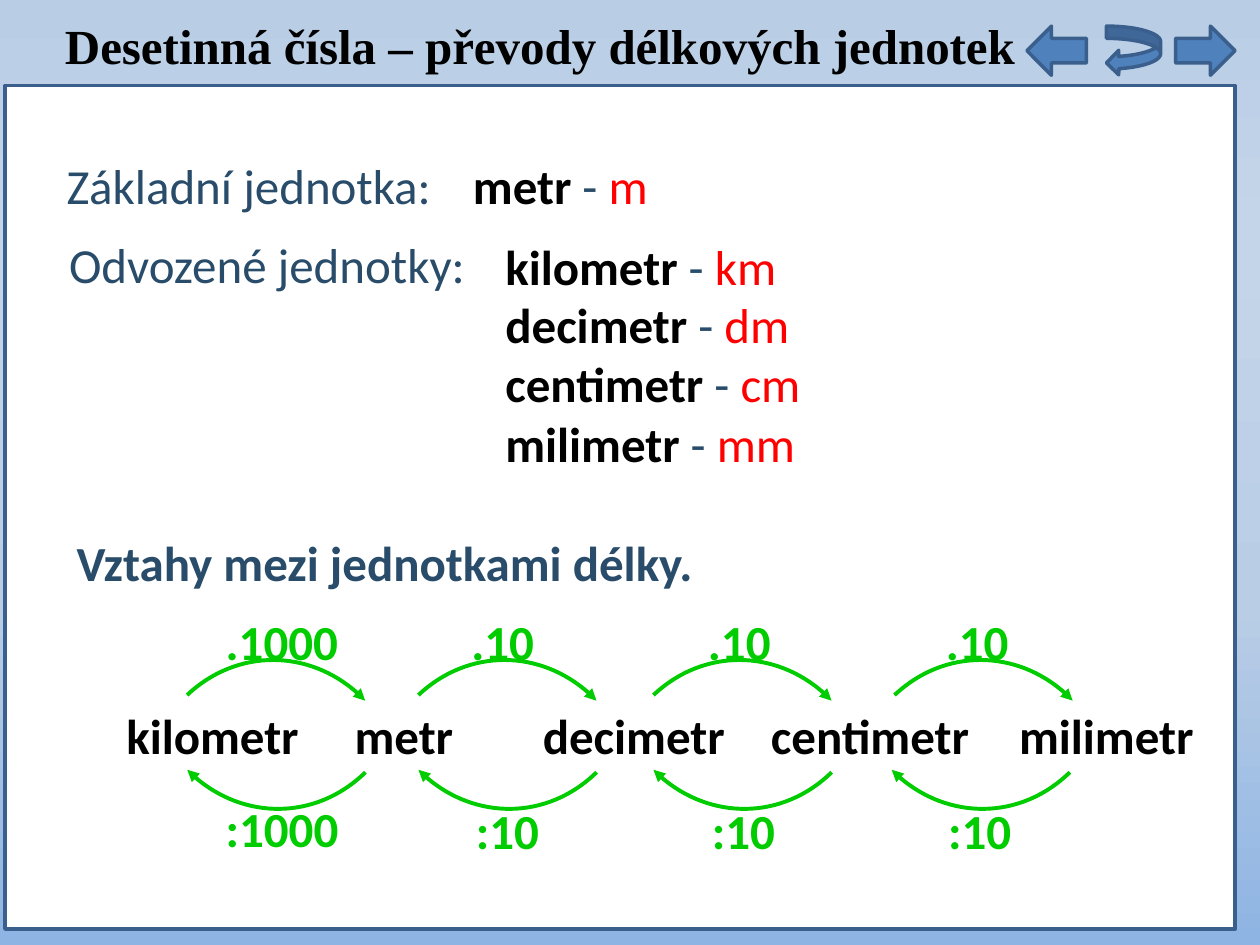
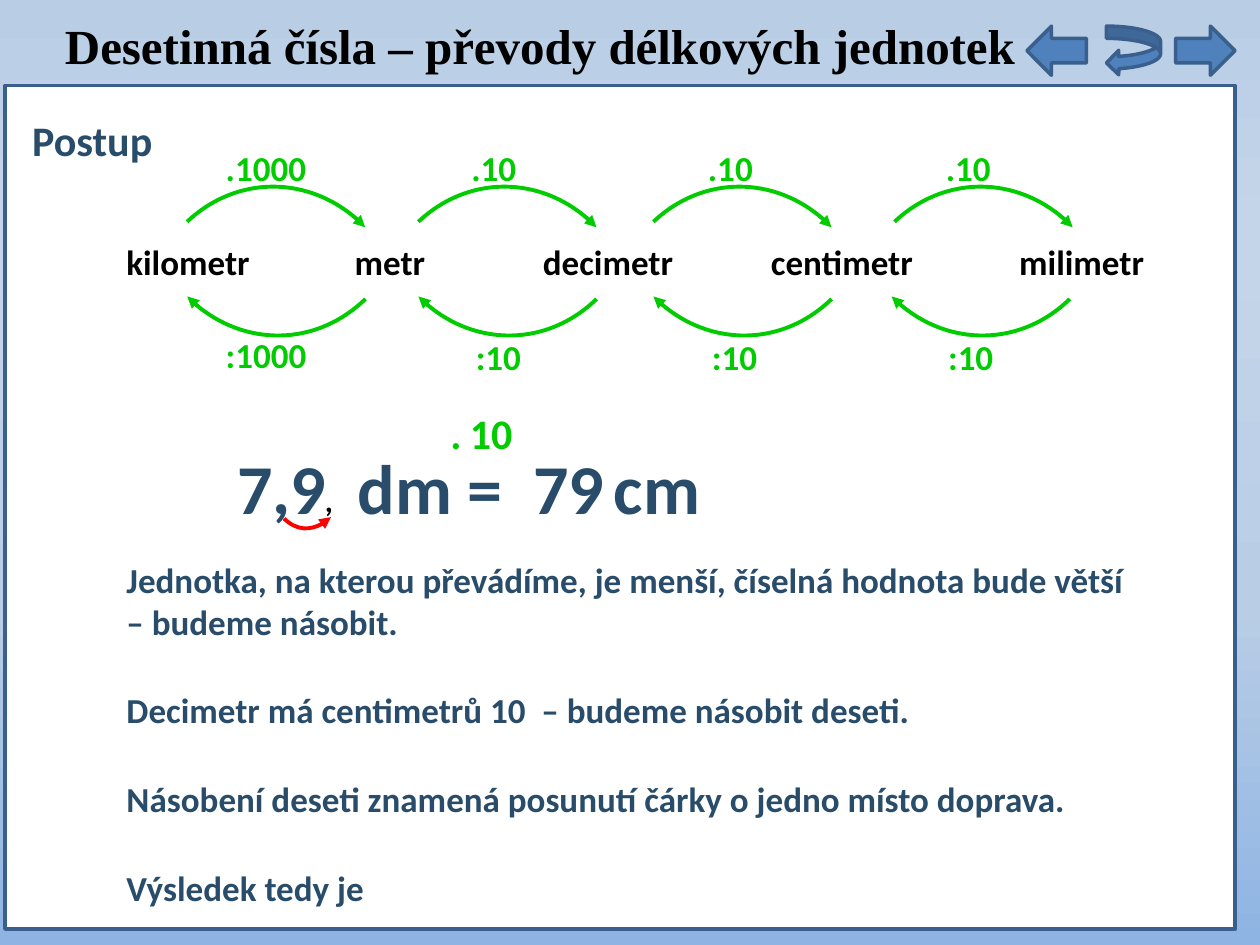
"""Build two slides on converting decimal length units."""
from dataclasses import dataclass

import lxml.etree
import pptx
import pptx.dml.color
import pptx.enum.shapes
import pptx.enum.text
import pptx.oxml.ns
import pptx.util

Pt = pptx.util.Pt
RGB = pptx.dml.color.RGBColor.from_string
qn = pptx.oxml.ns.qn
MSO_SHAPE = pptx.enum.shapes.MSO_SHAPE
PP_ALIGN = pptx.enum.text.PP_ALIGN
MSO_ANCHOR = pptx.enum.text.MSO_ANCHOR


@dataclass(frozen=True)
class Theme:
    black: str = "000000"
    white: str = "FFFFFF"
    slate: str = "284C6A"
    red: str = "FF0000"
    green: str = "00CC00"
    blue: str = "4F81BD"
    outline: str = "3A5F8C"
    sky: tuple = ((0, "B9CDE5"), (25, "C5D5E9"), (64, "B9CDE5"), (100, "8EB4E3"))
    font: str = "Calibri"
    title_font: str = "Times New Roman"
    large: int = 28
    equation: int = 40
    heading: int = 24
    small: int = 20
    comma: int = 18
    border: float = 2
    arc: float = 2.25


T = Theme()
ROW_H = 33.84


def add_text(s, x, y, w, h, runs, size, font=T.font, align=PP_ALIGN.LEFT,
             anchor=MSO_ANCHOR.MIDDLE, tabs=()):
    """Add a one-paragraph text box from (text, colour, bold) runs."""
    tf = s.shapes.add_textbox(Pt(x), Pt(y), Pt(w), Pt(h)).text_frame
    tf.word_wrap = True
    tf.vertical_anchor = anchor
    p = tf.paragraphs[0]
    p.alignment = align
    if tabs:
        tab_list = lxml.etree.SubElement(p._p.get_or_add_pPr(), qn("a:tabLst"))
        for tab in tabs:
            lxml.etree.SubElement(tab_list, qn("a:tab"), pos=str(Pt(tab)), algn="l")
    for text, colour, bold in runs:
        r = p.add_run()
        r.text = text
        r.font.name = font
        r.font.size = Pt(size)
        r.font.bold = bold
        r.font.color.rgb = RGB(colour)


def add_arc(s, x, y, radius, rotation, colour, arrow_end):
    """Add a rotated quarter circle with an arrowhead at one end."""
    builder = s.shapes.build_freeform(Pt(x), Pt(y))
    builder.add_line_segments([(Pt(x + radius), Pt(y + radius))], close=False)
    sp = builder.convert_to_shape()
    straight = next(sp._element.iter(qn("a:lnTo")))
    curve = lxml.etree.Element(qn("a:cubicBezTo"))
    for px, py in [(0.5523, 0), (1, 0.4477), (1, 1)]:
        lxml.etree.SubElement(curve, qn("a:pt"), x=str(Pt(radius * px)), y=str(Pt(radius * py)))
    straight.getparent().replace(straight, curve)
    sp.rotation = rotation
    sp.shadow.inherit = False
    sp.fill.background()
    sp.line.color.rgb = RGB(colour)
    sp.line.width = Pt(T.arc)
    ln = sp._element.spPr.find(qn("a:ln"))
    lxml.etree.SubElement(ln, qn(arrow_end), type="triangle")


prs = pptx.Presentation()
prs.slide_width, prs.slide_height = Pt(720), Pt(540)

fill = prs.slide_master.background.fill
fill.gradient()
fill.gradient_angle = 270
stops = fill.gradient_stops[0]._gs.getparent()
for gs in list(stops):
    stops.remove(gs)
for percent, colour in T.sky:
    gs = lxml.etree.SubElement(stops, qn("a:gs"), pos=str(percent * 1000))
    lxml.etree.SubElement(gs, qn("a:srgbClr"), val=colour)

frame = [
    (MSO_SHAPE.RECTANGLE, 2.88, 48.96, 703, 482, T.white),
    (MSO_SHAPE.RIGHT_ARROW, 671.76, 14.9, 34, 28.08, T.blue),
    (MSO_SHAPE.LEFT_ARROW, 586.8, 14.9, 34, 28.08, T.blue),
    (MSO_SHAPE.CURVED_LEFT_ARROW, 632.3, 14.9, 30.96, 28.08, T.blue),
]
chain_units = [("kilometr", 65.1), ("metr", 195.6), ("decimetr", 303.12),
               ("centimetr", 433.44), ("milimetr", 575.28)]
chain_steps = [
    ("1000", 79.4, 121.8, 121.9, 121.9, 121.9, 53.6),
    ("10", 56.88, 254, 262.2, 254, 264.8, 54.7),
    ("10", 56.88, 388.3, 397.44, 388.3, 399.7, 54.7),
    ("10", 56.88, 526.1, 533.4, 524.4, 534.7, 54.7),
]

slides = []
for chain_y, chain_size in [(402.8, T.large), (132.3, T.small)]:
    s = prs.slides.add_slide(prs.slide_layouts[6])
    slides.append(s)
    for kind, x, y, w, h, colour in frame:
        sp = s.shapes.add_shape(kind, Pt(x), Pt(y), Pt(w), Pt(h))
        sp.shadow.inherit = False
        sp.fill.solid()
        sp.fill.fore_color.rgb = RGB(colour)
        sp.line.color.rgb = RGB(T.outline)
        sp.line.width = Pt(T.border)
    add_text(s, 1.8, -2.16, 613.44, 55.44,
             [("Desetinná čísla – převody délkových jednotek", T.black, True)],
             T.large, T.title_font, PP_ALIGN.CENTER)
    for unit, x in chain_units:
        w = 118.8 if unit == "milimetr" else 147.6
        add_text(s, x, chain_y, w, ROW_H, [(unit, T.black, True)], chain_size)
    for factor, w, up_x, times_x, down_x, divide_x, divide_dy in chain_steps:
        add_arc(s, up_x, chain_y - 40, 72, 316.8, T.green, "a:tailEnd")
        add_text(s, times_x, chain_y - 53.4, w, ROW_H, [("." + factor, T.green, True)], chain_size)
        add_arc(s, down_x, chain_y + 1.8, 72, 135.8, T.green, "a:tailEnd")
        add_text(s, divide_x, chain_y + divide_dy, w, ROW_H, [(":" + factor, T.green, True)], chain_size)

units_slide, method_slide = slides

for name, symbol, x, y in [
    ("metr", "m", 263.2, 88.56),
    ("kilometr", "km", 281.7, 135),
    ("decimetr", "dm", 281.7, 168.1),
    ("centimetr", "cm", 281.7, 201.9),
    ("milimetr", "mm", 281.7, 236.16),
]:
    add_text(units_slide, x, y, 320, ROW_H,
             [(name, T.black, True), (" - ", T.slate, False), (symbol, T.red, False)], T.large)
for text, x, y, w, h, bold in [
    ("Základní jednotka:", 30.96, 88.56, 449.28, ROW_H, False),
    ("Odvozené jednotky:", 32.4, 133.92, 430.56, ROW_H, False),
    ("Vztahy mezi jednotkami délky.", 36.72, 298.4, 646.56, 45.36, True),
]:
    add_text(units_slide, x, y, w, h, [(text, T.slate, bold)], T.large)

add_text(method_slide, 11.3, 54.4, 666, 51.12, [("Postup", T.slate, True)], T.heading)
add_text(method_slide, 128.4, 261.36, 388, ROW_H, [("7,9\tdm =\tcm", T.slate, True)],
         T.equation, tabs=(69, 215.3))
add_text(method_slide, 297.6, 261.36, 96.48, ROW_H, [("79", T.slate, True)], T.equation)
for text, x in [("10", 261.4), (".", 250.3)]:
    add_text(method_slide, x, 230.4, 60, ROW_H, [(text, T.green, True)], T.heading)
add_arc(method_slide, 166.2, 286.4, 19, 133.2, T.red, "a:headEnd")
add_text(method_slide, 178.56, 271.44, 28.08, 28.8, [(",", T.black, True)], T.comma, anchor=MSO_ANCHOR.TOP)
for text, y, w in [
    ("Jednotka, na kterou převádíme, je menší, číselná hodnota bude větší – budeme násobit.", 317.52, 587),
    ("Decimetr má centimetrů 10  – budeme násobit deseti.", 379.7, 642.96),
    ("Násobení deseti znamená posunutí čárky o jedno místo doprava.", 430.56, 617.76),
    ("Výsledek tedy je", 481.68, 617.76),
]:
    add_text(method_slide, 65.2, y, w, 51.12, [(text, T.slate, True)], T.small)

prs.save("out.pptx")
